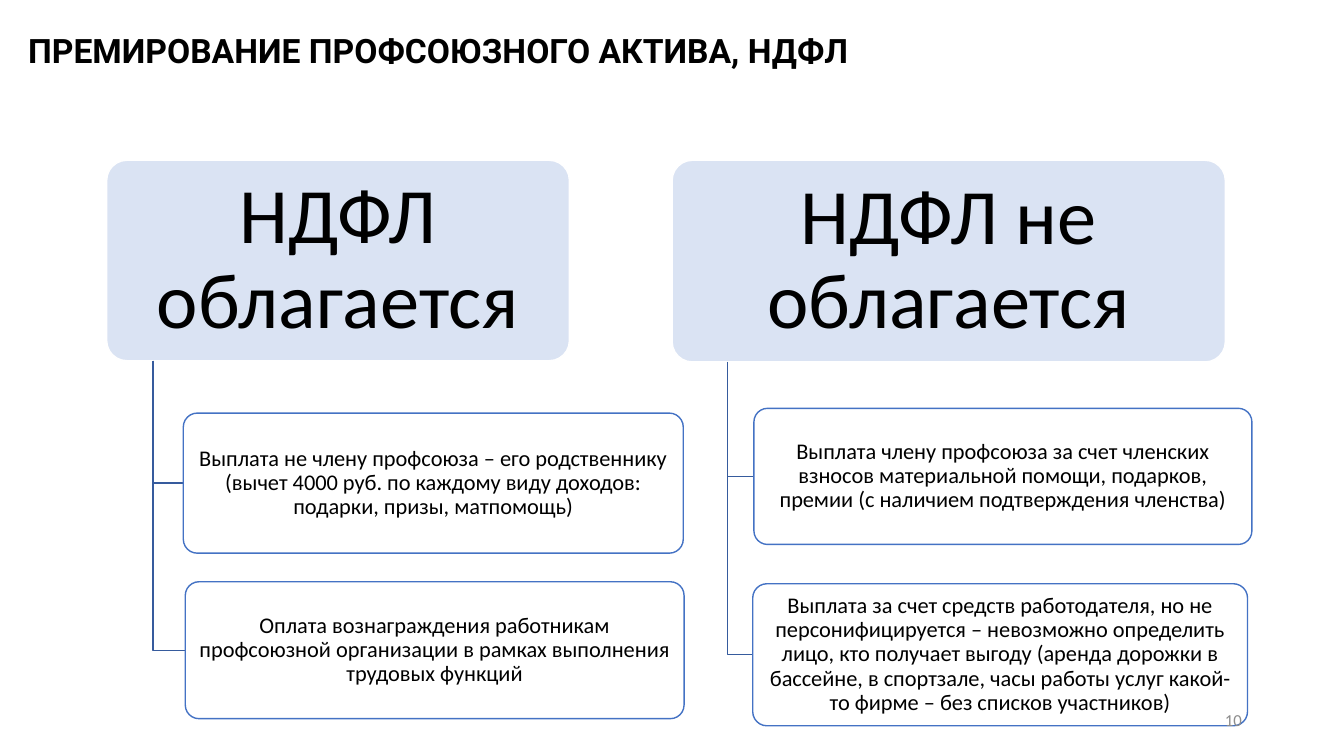
import pptx
import pptx.util
import pptx.dml.color
import pptx.enum.shapes
import pptx.enum.text
import lxml.etree

Cm = pptx.util.Cm
Pt = pptx.util.Pt
RGBColor = pptx.dml.color.RGBColor
ALIGN = pptx.enum.text.PP_ALIGN

BLACK = RGBColor(0x00, 0x00, 0x00)
WHITE = RGBColor(0xFF, 0xFF, 0xFF)
PALE = RGBColor(0xDA, 0xE3, 0xF3)
BLUE = RGBColor(0x44, 0x72, 0xC4)
STEEL = RGBColor(0x36, 0x5B, 0x9D)
GREY = RGBColor(0x8C, 0x8C, 0x8C)

GLOW = (
    '<a:effectLst xmlns:a="http://schemas.openxmlformats.org/drawingml/2006/main">'
    '<a:outerShdw blurRad="38100" dist="38100" dir="2700000" algn="tl">'
    '<a:srgbClr val="000000"><a:alpha val="43000"/></a:srgbClr>'
    '</a:outerShdw></a:effectLst>'
)


def write(shape, text, size, color=BLACK, font="Calibri", align=ALIGN.CENTER, pad=(0.25, 0.13)):
    frame = shape.text_frame
    frame.word_wrap = True
    frame.vertical_anchor = pptx.enum.text.MSO_ANCHOR.MIDDLE
    frame.margin_left = frame.margin_right = Cm(pad[0])
    frame.margin_top = frame.margin_bottom = Cm(pad[1])
    frame.text = text
    line = frame.paragraphs[0]
    line.alignment = align
    line.line_spacing = 0.9
    run = line.runs[0]
    run.font.size = Pt(size)
    run.font.name = font
    run.font.color.rgb = color
    return run


def add_title(slide, left, top, wide, high):
    box = slide.shapes.add_textbox(Cm(left), Cm(top), Cm(wide), Cm(high))
    run = write(box, "ПРЕМИРОВАНИЕ ПРОФСОЮЗНОГО АКТИВА, НДФЛ", 24, font="Roboto", align=ALIGN.LEFT)
    run.font.bold = True
    fill = run.font._element.find(pptx.oxml.ns.qn("a:solidFill"))
    fill.addnext(lxml.etree.fromstring(GLOW))


def add_card(slide, left, top, wide, high, fill, edge, text, size, pad):
    kind = pptx.enum.shapes.MSO_SHAPE.ROUNDED_RECTANGLE
    card = slide.shapes.add_shape(kind, Cm(left), Cm(top), Cm(wide), Cm(high))
    card.adjustments[0] = 0.1
    card.shadow.inherit = False
    card.fill.solid()
    card.fill.fore_color.rgb = fill
    card.line.color.rgb = edge
    card.line.width = Pt(1)
    write(card, text, size, pad=pad)


def add_elbow(slide, left, top, right, low):
    pen = slide.shapes.build_freeform(Cm(left), Cm(top))
    pen.add_line_segments([(Cm(left), Cm(low)), (Cm(right), Cm(low))], close=False)
    elbow = pen.convert_to_shape()
    elbow.shadow.inherit = False
    elbow.fill.background()
    elbow.line.color.rgb = STEEL
    elbow.line.width = Pt(1)


def add_branch(slide, left, top, wide, high, head, leaves):
    add_card(slide, left, top, wide, high, PALE, WHITE, head, 56, (0.45, 0.35))
    for right, down, span, tall, text in leaves:
        add_elbow(slide, left + wide / 10, top + high, left + right, top + down + tall / 2)
        add_card(slide, left + right, top + down, span, tall, WHITE, BLUE, text, 16, (0.18, 0.15))


def add_number(slide, left, top, wide, high):
    box = slide.shapes.add_textbox(Cm(left), Cm(top), Cm(wide), Cm(high))
    write(box, "10", 12, GREY, align=ALIGN.RIGHT)


TAXED = [
    (1.93, 6.37, 12.6, 3.53,
     "Выплата не члену профсоюза – его родственнику (вычет 4000 руб. "
     "по каждому виду доходов: подарки, призы, матпомощь)"),
    (1.98, 10.62, 12.57, 3.45,
     "Оплата вознаграждения работникам профсоюзной организации "
     "в рамках выполнения трудовых функций"),
]
EXEMPT = [
    (2.06, 6.25, 12.55, 3.43,
     "Выплата члену профсоюза за счет членских взносов материальной помощи, "
     "подарков, премии (с наличием подтверждения членства)"),
    (2.03, 10.67, 12.47, 3.58,
     "Выплата за счет средств работодателя, но не персонифицируется – "
     "невозможно определить лицо, кто получает выгоду (аренда дорожки в бассейне, "
     "в спортзале, часы работы услуг какой-то фирме – без списков участников)"),
]


def main():
    deck = pptx.Presentation()
    deck.slide_width = Cm(33.87)
    deck.slide_height = Cm(19.05)
    slide = deck.slides.add_slide(deck.slide_layouts[6])
    add_title(slide, 0.46, 0.41, 24.61, 1.85)
    add_branch(slide, 2.69, 4.04, 11.66, 5.05, "НДФЛ облагается", TAXED)
    add_branch(slide, 16.94, 4.04, 13.94, 5.08, "НДФЛ не облагается", EXEMPT)
    add_number(slide, 23.93, 17.65, 7.62, 1.02)
    deck.save("out.pptx")


if __name__ == "__main__":
    main()
